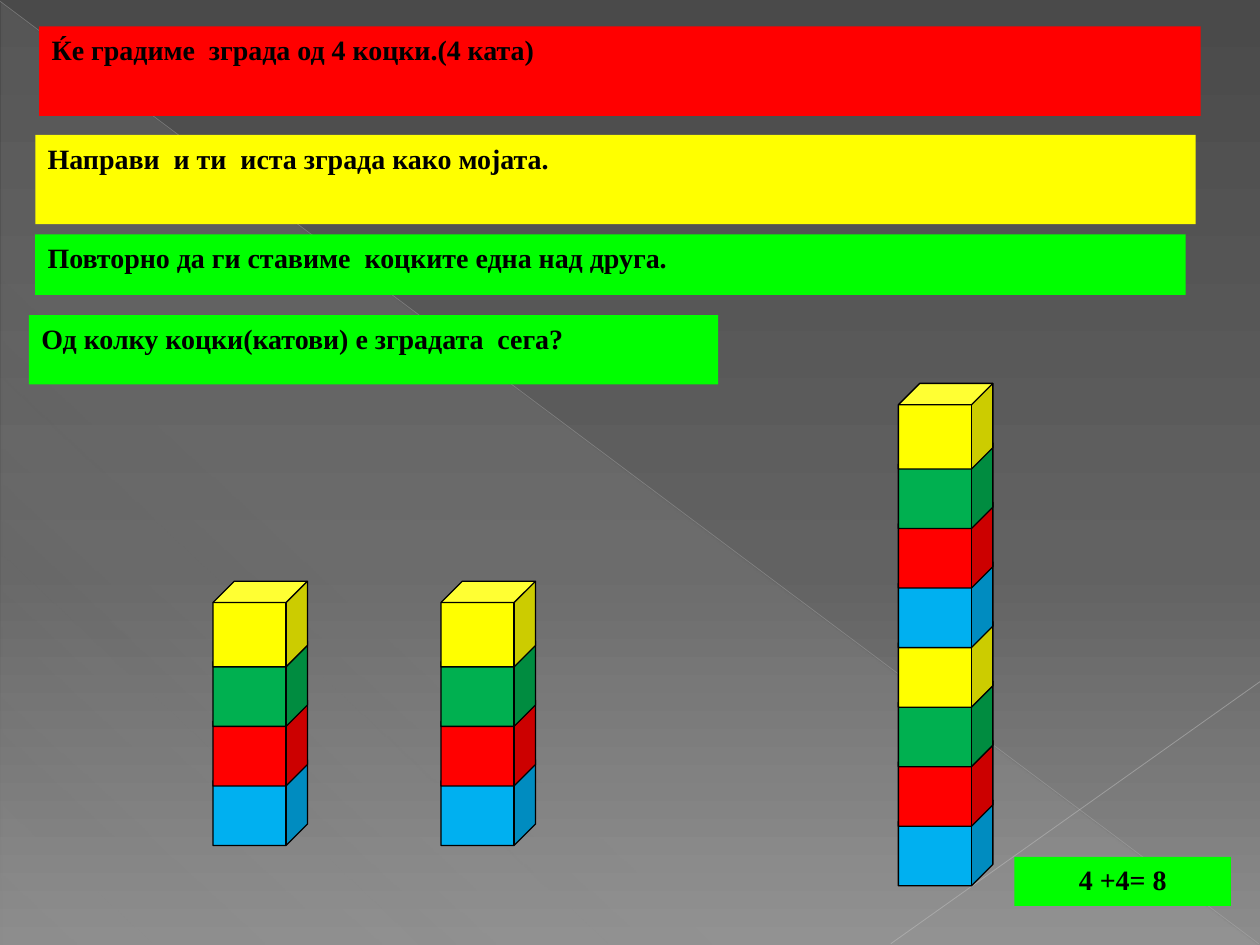
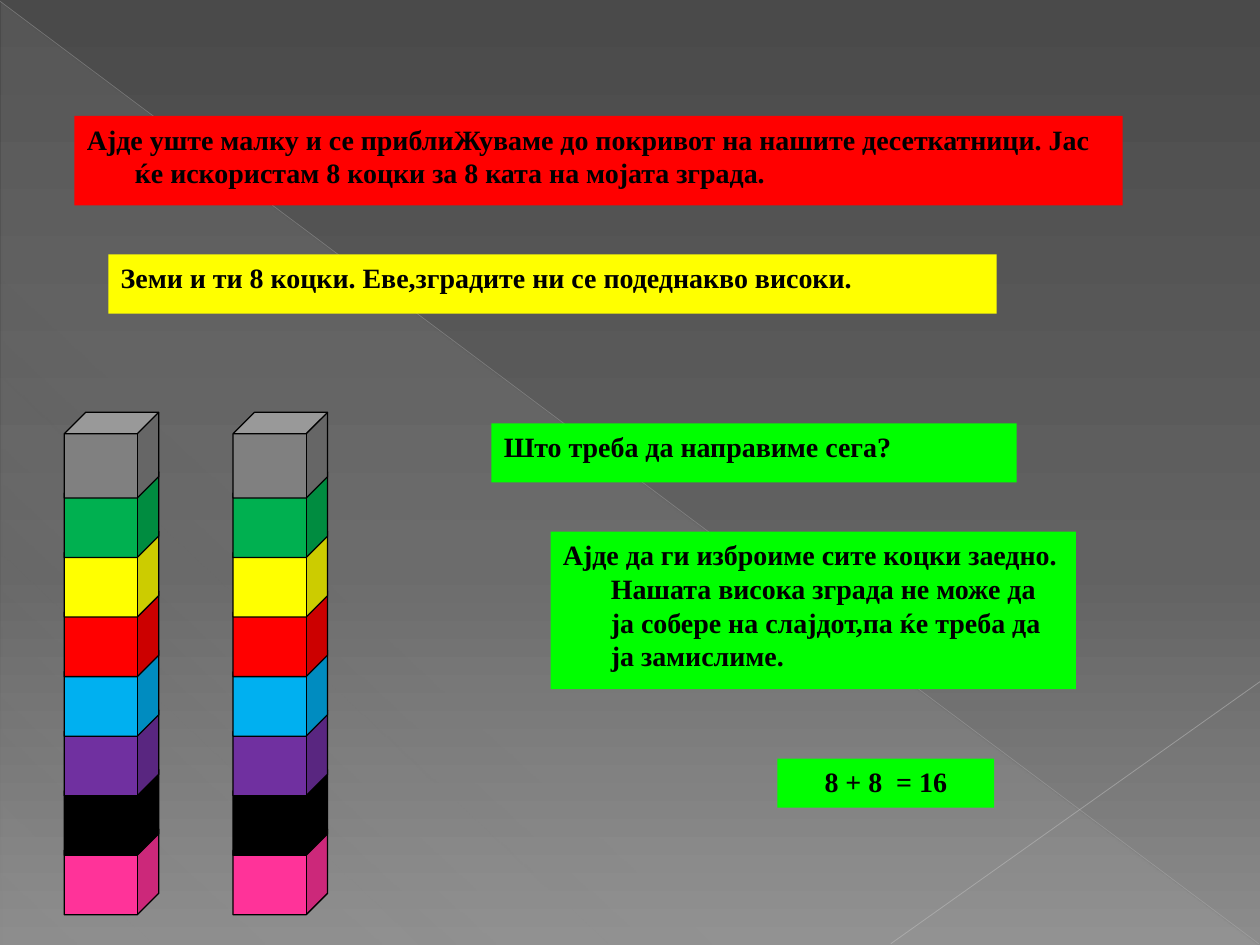
from lxml import etree
from pptx import Presentation
from pptx.dml.color import RGBColor
from pptx.enum.shapes import MSO_CONNECTOR, MSO_SHAPE
from pptx.enum.text import MSO_ANCHOR, MSO_AUTO_SIZE, PP_ALIGN
from pptx.oxml.ns import qn
from pptx.util import Inches, Pt

RECTANGLE, CUBE, TRIANGLE = MSO_SHAPE.RECTANGLE, MSO_SHAPE.CUBE, MSO_SHAPE.RIGHT_TRIANGLE
STRAIGHT = MSO_CONNECTOR.STRAIGHT
TOP, NO_FIT = MSO_ANCHOR.TOP, MSO_AUTO_SIZE.NONE
LEFT, CENTER = PP_ALIGN.LEFT, PP_ALIGN.CENTER

RED, YELLOW, LIME = "FF0000", "FFFF00", "00FF00"
BLUE, GREEN, BLACK = "00B0F0", "00B050", "000000"
PURPLE, PINK, GRAY = "7030A0", "FF3399", "808080"

TITLE_ONLY = 5
CUBE_WIDTH, CUBE_HEIGHT, FLOOR_STEP = 0.75, 0.68, 0.4725
HANGING = Inches(0.38)
FONT_FORMAT = {"name": "Times New Roman", "size": Pt(16), "bold": True}
FRAME_FORMAT = {
    "word_wrap": True, "auto_size": NO_FIT, "vertical_anchor": TOP,
    "margin_left": Inches(0.1), "margin_right": Inches(0.1),
    "margin_top": Inches(0.05), "margin_bottom": Inches(0.05),
}


def paint(fill, color):
    fill.solid()
    fill.fore_color.rgb = RGBColor.from_string(color)


def blend(fill, angle, stops):
    fill.gradient()
    fill.gradient_angle = 360 - angle
    stop_list = fill._fill._gradFill.find(qn("a:gsLst"))
    for old_stop in list(stop_list):
        stop_list.remove(old_stop)
    for position, color, opacity in stops:
        stop = etree.SubElement(stop_list, qn("a:gs"), pos=str(position * 1000))
        tone = etree.SubElement(stop, qn("a:srgbClr"), val=color)
        etree.SubElement(tone, qn("a:alpha"), val=str(opacity * 1000))


four_floors = [BLUE, RED, GREEN, YELLOW]
eight_floors = [PINK, BLACK, PURPLE, BLUE, RED, YELLOW, GREEN, GRAY]

lessons = [
    {
        "bands": [
            ("Ќе градиме  зграда од 4 коцки.(4 ката)", RED, LEFT, (0.31, 0.21, 9.22, 0.71)),
            ("Направи  и ти  иста зграда како мојата.", YELLOW, LEFT, (0.28, 1.07, 9.21, 0.71)),
            ("Повторно да ги ставиме  коцките една над друга.", LIME, LEFT,
             (0.28, 1.86, 9.13, 0.48)),
            ("Од колку коцки(катови) е зградата  сега?", LIME, LEFT, (0.23, 2.5, 5.47, 0.55)),
            ("4 +4= 8", LIME, CENTER, (8.05, 6.8, 1.72, 0.39)),
        ],
        "towers": [(1.69, 6.03, four_floors), (3.5, 6.03, four_floors),
                   (7.13, 6.35, four_floors * 2)],
    },
    {
        "bands": [
            ("Ајде уште малку и се приблиЖуваме до покривот на нашите десеткатници. "
             "Јас ќе искористам 8 коцки за 8 ката на мојата зграда.", RED, LEFT,
             (0.59, 0.92, 8.32, 0.71)),
            ("Земи и ти 8 коцки. Еве,зградите ни се подеднакво високи.", YELLOW, LEFT,
             (0.86, 2.02, 7.05, 0.47)),
            ("Што треба да направиме сега?", LIME, LEFT, (3.9, 3.36, 4.17, 0.47)),
            ("Ајде да ги изброиме сите коцки заедно. Нашата висока зграда не може да "
             "ја собере на слајдот,па ќе треба да ја замислиме.", LIME, LEFT,
             (4.37, 4.22, 4.17, 1.25)),
            ("8 + 8  = 16", LIME, CENTER, (6.17, 6.02, 1.72, 0.39)),
        ],
        "towers": [(0.51, 6.58, eight_floors), (1.85, 6.58, eight_floors)],
    },
]

deck = Presentation()
deck.slide_width, deck.slide_height = Inches(10), Inches(7.5)
master = deck.slide_master
blend(master.background.fill, 90,
      [(0, "4A4A4A", 100), (60, "626262", 100), (100, "8C8C8C", 100)])

slides = [deck.slides.add_slide(deck.slide_layouts[TITLE_ONLY]) for lesson in lessons]

corner = slides[0].shapes.add_shape(
    TRIANGLE, Inches(0.01), Inches(0.02), Inches(9.98), Inches(7.48))
corner.shadow.inherit = False
corner.line.fill.background()
blend(corner.fill, 133, [(0, "D2D2D2", 10), (70, "D2D2D2", 8), (100, "D2D2D2", 1)])
backdrop = [corner]
for ends, color, width, opacity in [
    ((0, 0.01, 9.99, 7.49), "BFBFBF", 0.39, 35),
    ((10, 5.41, 7.07, 7.49), "C6C6C6", 0.47, 45),
]:
    ray = slides[0].shapes.add_connector(STRAIGHT, *map(Inches, ends))
    ray.line.width = Pt(width)
    paint(ray.line.fill, color)
    tone = ray._element.spPr.find(".//" + qn("a:srgbClr"))
    etree.SubElement(tone, qn("a:alpha"), val=str(opacity * 1000))
    etree.SubElement(ray._element.spPr, qn("a:effectLst"))
    backdrop.append(ray)
for number, piece in enumerate(backdrop):
    piece._element._nvXxPr.cNvPr.set("id", str(100 + number))
    master.shapes._spTree.insert(2 + number, piece._element)

for slide, lesson in zip(slides, lessons):
    for order, (wording, color, alignment, box) in enumerate(lesson["bands"]):
        left, top, width, height = map(Inches, box)
        if order == 0:
            band = slide.shapes.title
            band.left, band.top, band.width, band.height = left, top, width, height
        else:
            band = slide.shapes.add_shape(RECTANGLE, left, top, width, height)
            band.shadow.inherit = False
        paint(band.fill, color)
        band.line.fill.background()
        frame = band.text_frame
        for setting, value in FRAME_FORMAT.items():
            setattr(frame, setting, value)
        paragraph = frame.paragraphs[0]
        paragraph.alignment = alignment
        paragraph.space_before = Pt(3.2)
        properties = paragraph._p.get_or_add_pPr()
        properties.set("marL", str(HANGING))
        properties.set("indent", str(-HANGING))
        run = paragraph.add_run()
        run.text = wording
        for setting, value in FONT_FORMAT.items():
            setattr(run.font, setting, value)
        paint(run.font.fill, BLACK)

    for left, ground, floors in lesson["towers"]:
        for level, color in enumerate(floors):
            block = slide.shapes.add_shape(
                CUBE, Inches(left), Inches(ground - level * FLOOR_STEP),
                Inches(CUBE_WIDTH), Inches(CUBE_HEIGHT))
            block.shadow.inherit = False
            paint(block.fill, color)
            paint(block.line.fill, BLACK)
            block.line.width = Pt(0.75)

deck.save("out.pptx")
